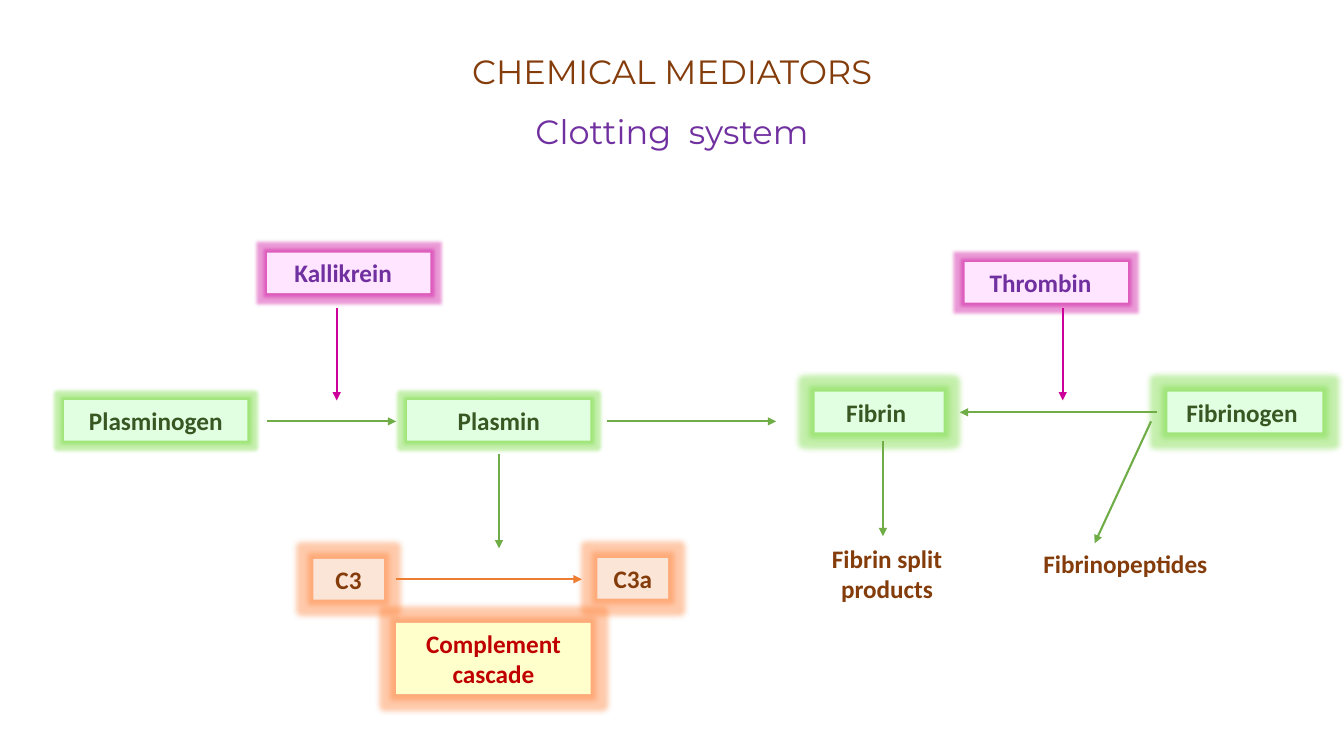
from typing import NamedTuple, Optional

from lxml import etree
from pptx import Presentation
from pptx.dml.color import RGBColor
from pptx.enum.shapes import MSO_CONNECTOR, MSO_SHAPE
from pptx.enum.text import MSO_ANCHOR, MSO_AUTO_SIZE, PP_ALIGN
from pptx.oxml.ns import qn
from pptx.util import Pt

RECT = MSO_SHAPE.RECTANGLE
STRAIGHT = MSO_CONNECTOR.STRAIGHT
CENTER = PP_ALIGN.CENTER
MIDDLE = MSO_ANCHOR.MIDDLE
NO_FIT = MSO_AUTO_SIZE.NONE
GROW = MSO_AUTO_SIZE.SHAPE_TO_FIT_TEXT

BROWN = RGBColor(0x84, 0x3C, 0x0B)
PURPLE = RGBColor(0x70, 0x30, 0xA0)
DARK_GREEN = RGBColor(0x38, 0x57, 0x23)
RED = RGBColor(0xC0, 0x00, 0x00)
PINK_FILL = RGBColor(0xFF, 0xE5, 0xFF)
GREEN_FILL = RGBColor(0xE1, 0xFF, 0xE1)
PEACH_FILL = RGBColor(0xFB, 0xE5, 0xD6)
YELLOW_FILL = RGBColor(0xFF, 0xFF, 0xCC)
GREEN_LINE = RGBColor(0x70, 0xAD, 0x47)
ORANGE_LINE = RGBColor(0xED, 0x7D, 0x31)
MAGENTA_LINE = RGBColor(0xCC, 0x00, 0x99)
PINK_GLOW = RGBColor(0xCC, 0x00, 0x99)
GREEN_GLOW = RGBColor(0x6C, 0xD8, 0x30)
ORANGE_GLOW = RGBColor(0xFF, 0x7C, 0x2E)

INSET = 7.2
ONE_LINE, TWO_LINES = 29.08, 50.9
NARROW, WIDE = 5, 8  # glow radii


class Style(NamedTuple):
    color: RGBColor
    fill: Optional[RGBColor] = None
    glow: Optional[RGBColor] = None


class Label(NamedTuple):
    text: str
    left: float
    top: float
    width: float
    style: Style
    radius: float = 0
    extra_right: float = 0  # widens the right inset
    height: float = ONE_LINE


class Arrow(NamedTuple):
    x1: float
    y1: float
    x2: float
    y2: float
    color: RGBColor = GREEN_LINE


ENZYME = Style(PURPLE, PINK_FILL, PINK_GLOW)
PROTEIN = Style(DARK_GREEN, GREEN_FILL, GREEN_GLOW)
COMPLEMENT = Style(BROWN, PEACH_FILL, ORANGE_GLOW)
CASCADE = Style(RED, YELLOW_FILL, ORANGE_GLOW)
PRODUCT = Style(BROWN)

LABELS = [
    Label("Kallikrein", 190.8, 180.4, 116.7, ENZYME, NARROW, 8),
    Label("Thrombin", 689, 187.2, 116.7, ENZYME, NARROW, 8),
    Label("Plasminogen", 45.8, 285.8, 131, PROTEIN, NARROW),
    Label("Plasmin", 290.8, 285.8, 131, PROTEIN, NARROW),
    Label("Fibrin", 581.8, 279.8, 92.2, PROTEIN, WIDE, 4),
    Label("Fibrinogen", 833.8, 279.8, 110.9, PROTEIN, WIDE, 4),
    Label("C3", 223.8, 399.2, 50.4, COMPLEMENT, WIDE),
    Label("C3a", 426.8, 398.6, 50.4, COMPLEMENT, WIDE),
    Label("Complement cascade", 283, 445, 139, CASCADE, WIDE, height=TWO_LINES),
    Label("Fibrin split products", 581.8, 384.5, 103.7, PRODUCT, height=TWO_LINES),
    Label("Fibrinopeptides", 736.4, 388.1, 139, PRODUCT, extra_right=4),
]

ARROWS = [
    Arrow(190.8, 301, 283, 301),
    Arrow(433.4, 301, 554.4, 301),
    Arrow(356.4, 324, 356.4, 391.7),
    Arrow(826.8, 294.5, 685.6, 294.5),
    Arrow(822.2, 301, 781.9, 388.1),
    Arrow(630.7, 315.2, 630.7, 383),
    Arrow(283, 413.8, 415.6, 413.8, ORANGE_LINE),
    Arrow(240.5, 220.3, 240.5, 286, MAGENTA_LINE),
    Arrow(759.1, 220.3, 759.1, 286, MAGENTA_LINE),
]


def add_text(p, text: str, *, color: RGBColor, size: float = 18,
             font: str = "Calibri", bold: bool = False) -> None:
    r = p.add_run()
    r.text = text
    r.font.name = font
    r.font.size = Pt(size)
    r.font.bold = bold
    r.font.color.rgb = color


def add_glow(sp, color: RGBColor, radius: float) -> None:
    effects = sp._element.spPr.find(qn("a:effectLst"))
    glow = etree.SubElement(effects, qn("a:glow"), rad=str(Pt(radius)))
    clr = etree.SubElement(glow, qn("a:srgbClr"), val=str(color))
    etree.SubElement(clr, qn("a:alpha"), val="40000")


def add_label(s, label: Label) -> None:
    box = [Pt(v) for v in (label.left, label.top, label.width, label.height)]
    style = label.style
    if style.fill is None:
        sp = s.shapes.add_textbox(*box)
    else:
        sp = s.shapes.add_shape(RECT, *box)
        sp.shadow.inherit = False
        sp.fill.solid()
        sp.fill.fore_color.rgb = style.fill
        sp.line.fill.background()
        add_glow(sp, style.glow, label.radius)
    tf = sp.text_frame
    tf.word_wrap = True
    tf.auto_size = GROW
    tf.margin_right = Pt(INSET + label.extra_right)
    p = tf.paragraphs[0]
    p.alignment = CENTER
    add_text(p, label.text, color=style.color, bold=True)


def add_arrow(s, arrow: Arrow) -> None:
    line = s.shapes.add_connector(
        STRAIGHT, Pt(arrow.x1), Pt(arrow.y1), Pt(arrow.x2), Pt(arrow.y2))
    line.line.width = Pt(1.5)
    line.line.color.rgb = arrow.color
    etree.SubElement(line.line._get_or_add_ln(), qn("a:tailEnd"), type="triangle")
    etree.SubElement(line._element.spPr, qn("a:effectLst"))


def add_title(s) -> None:
    sp = s.shapes.title
    sp.left, sp.top, sp.width, sp.height = Pt(66), Pt(23.7), Pt(828), Pt(82.8)
    tf = sp.text_frame
    tf.word_wrap = True
    tf.auto_size = NO_FIT
    tf.vertical_anchor = MIDDLE
    p = tf.paragraphs[0]
    p.alignment = CENTER
    p.line_spacing = 1.5
    add_text(p, "CHEMICAL MEDIATORS", color=BROWN, size=24, font="Montserrat")
    p.add_line_break()
    add_text(p, "Clotting  system", color=PURPLE, size=24, font="Montserrat")


def main() -> None:
    prs = Presentation()
    prs.slide_width, prs.slide_height = Pt(960), Pt(540)
    s = prs.slides.add_slide(prs.slide_layouts[5])
    add_title(s)
    # Mediators and products
    for label in LABELS:
        add_label(s, label)
    # Reactions
    for arrow in ARROWS:
        add_arrow(s, arrow)
    prs.save("out.pptx")


if __name__ == "__main__":
    main()
